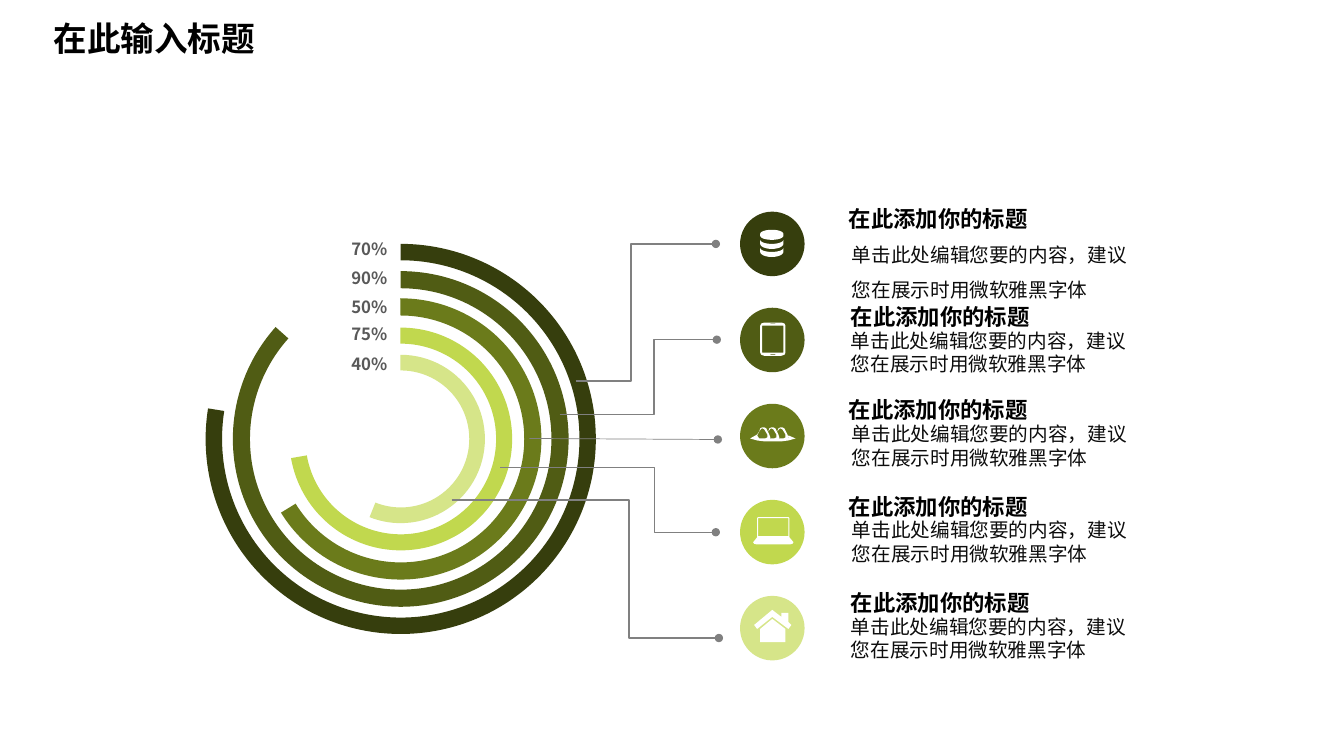
import math
import pptx
import pptx.util
import pptx.dml.color
import pptx.enum.shapes
import pptx.enum.text
import pptx.oxml.ns
import lxml.etree

theme = {
    "font": "Noto Sans CJK SC",
    "rings": ["363E0D", "505C14", "6B7B1B", "C1D84E", "D6E589"],
    "icon": "FFFFFF", "line": "808080",
    "title": (24, "000000", True),
    "head": (16, "000000", True),
    "body": (14, "0D0D0D", False),
    "label": (12, "595959", True),
}
cell = pptx.util.Inches(0.01)
kinds = pptx.enum.shapes.MSO_SHAPE
links = pptx.enum.shapes.MSO_CONNECTOR
align = pptx.enum.text.PP_ALIGN
fit = pptx.enum.text.MSO_AUTO_SIZE
qn = pptx.oxml.ns.qn
rgb = pptx.dml.color.RGBColor.from_string

deck = pptx.Presentation()
deck.slide_width, deck.slide_height = 1333 * cell, 750 * cell
slide = deck.slides.add_slide(deck.slide_layouts[5])
shapes = slide.shapes


def write(box, text, style, wrap=True, side=align.LEFT, gap=1.0):
    frame = box.text_frame
    frame.text = text
    frame.word_wrap = wrap
    frame.auto_size = fit.SHAPE_TO_FIT_TEXT
    frame.vertical_anchor = pptx.enum.text.MSO_ANCHOR.TOP
    para = frame.paragraphs[0]
    para.alignment, para.line_spacing = side, gap
    size, color, bold = theme[style]
    font = para.font
    font.size, font.bold, font.name = pptx.util.Pt(size), bold, theme["font"]
    font.color.rgb = rgb(color)
    east = lxml.etree.SubElement(para._p.pPr.find(qn("a:defRPr")), qn("a:ea"))
    east.set("typeface", theme["font"])


def paint(shape, color):
    shape.shadow.inherit = False
    shape.fill.solid()
    shape.fill.fore_color.rgb = rgb(color)
    shape.line.fill.background()


title = shapes.title
title.left, title.top, title.width, title.height = [n * cell for n in (43, 13, 261, 50)]
write(title, "在此输入标题", "title")

rings = [
    (387, 210.598, 162.029, 0.042),
    (333, 190.909, 162.029, 0.051),
    (279, 18.968, 162.122, 0.061),
    (221, 5.942, 162.125, 0.072),
    (167, 40.966, 162.132, 0.093),
]
for (size, *turns), color in zip(rings, theme["rings"]):
    left, top = 397.5 - size / 2, 435.5 - size / 2
    ring = shapes.add_shape(kinds.BLOCK_ARC, int(left * cell), int(top * cell), size * cell, size * cell)
    for spot, turn in enumerate(turns):
        ring.adjustments[spot] = turn
    ring._element.spPr.find(qn("a:xfrm")).set("flipH", "1")
    paint(ring, color)

labels = [("70%", 232), ("90%", 261), ("50%", 289), ("75%", 316), ("40%", 346)]
for text, top in labels:
    box = shapes.add_textbox(338 * cell, top * cell, 56 * cell, 30 * cell)
    write(box, text, "label", False, align.RIGHT)

wires = [
    (571, 378, 710, 242, 0.396),
    (555, 411, 711, 337, 0.601),
    (525, 435, 712, 436, None),
    (496, 464, 710, 528, 0.717),
    (448, 496, 713, 633, 0.664),
]
for *ends, bend in wires:
    kind = links.ELBOW if bend else links.STRAIGHT
    wire = shapes.add_connector(kind, *[n * cell for n in ends])
    wire.line.color.rgb = rgb(theme["line"])
    wire.line.width = pptx.util.Pt(1 if bend else 0.5)
    lxml.etree.SubElement(wire.line._get_or_add_ln(), qn("a:tailEnd"), type="oval")
    prop = wire._element.spPr
    lxml.etree.SubElement(prop, qn("a:effectLst"))
    if bend:
        guide = prop.find(qn("a:prstGeom")).get_or_add_avLst()
        lxml.etree.SubElement(guide, qn("a:gd"), name="adj1", fmla=f"val {round(bend * 100000)}")

arc = [(765.5 + 11.5 * math.cos(step * math.pi / 12), math.sin(step * math.pi / 12)) for step in range(13)]
disks = [[(x, 232 - 4 * y) for x, y in arc] + [(x, 234 + 4 * y) for x, y in reversed(arc)]]
for top in (238, 246):
    disks.append([(x, top + 4 * y) for x, y in arc] + [(x, top + 4 + 5 * y) for x, y in reversed(arc)])

tablet = [
    [(754, 323), (755, 321), (758, 320), (775, 320), (778, 321), (779, 323),
     (779, 350), (778, 352), (775, 353), (758, 353), (755, 352), (754, 350)],
    [(756, 323), (777, 323), (777, 350), (756, 350)],
    [(764, 321), (769, 321), (769, 321.5), (764, 321.5)],
    [(764, 351), (769, 351), (769, 352), (764, 352)],
]
dome = [(753, 428), (754, 425), (756, 424), (758, 424), (760, 425), (763, 431), (764, 434),
        (763, 435), (759, 435), (761, 434), (761, 431), (758, 426), (756, 425), (755, 425.5)]
tray = [[(744, 435), (751, 431), (753, 428), (751, 432), (753, 435), (781, 435),
         (782, 432), (789, 435), (782, 437), (774, 438), (759, 438), (751, 437)]]
tray += [[(x + shift, y) for x, y in dome] for shift in (0, 9, 18)]
laptop = [
    [(747, 538), (751, 533), (751, 514), (752, 513), (782, 513), (783, 514),
     (783, 533), (787, 538), (786, 539.5), (784, 540), (750, 540), (748, 539.5)],
    [(752, 514), (782, 514), (782, 532), (752, 532)],
]
house = [
    [(754, 624), (754, 637), (779, 637), (779, 624), (766, 614)],
    [(782, 617), (782, 608), (775, 608), (775, 612), (766, 605), (748, 620),
     (751, 624), (766, 612), (782, 624), (785, 620)],
]
icons = [disks, tablet, tray, laptop, house]
for row, (icon, color) in enumerate(zip(icons, theme["rings"])):
    top = 210 + 95.3 * row
    disc = shapes.add_shape(kinds.OVAL, 734 * cell, int(top * cell), 64 * cell, 64 * cell)
    paint(disc, color)
    paths = [[(x * cell, y * cell) for x, y in path] for path in icon]
    form = shapes.build_freeform(*paths[0][0])
    form.add_line_segments(paths[0][1:], close=True)
    for path in paths[1:]:
        form.move_to(*path[0])
        form.add_line_segments(path[1:], close=True)
    paint(form.convert_to_shape(), theme["icon"])

notes = [(832, 199, 835, 224), (834, 296, 834, 321), (832, 388, 835, 414),
         (832, 484, 835, 509), (834, 580, 834, 605)]
for row, (left, top, edge, base) in enumerate(notes):
    head = shapes.add_textbox(left * cell, top * cell, 237 * cell, 37 * cell)
    write(head, "在此添加你的标题", "head", False)
    body = shapes.add_textbox(edge * cell, base * cell, 295 * cell, 109 * cell)
    write(body, "单击此处编辑您要的内容，建议您在展示时用微软雅黑字体", "body", gap=1.0 if row else 1.5)

deck.save("out.pptx")
